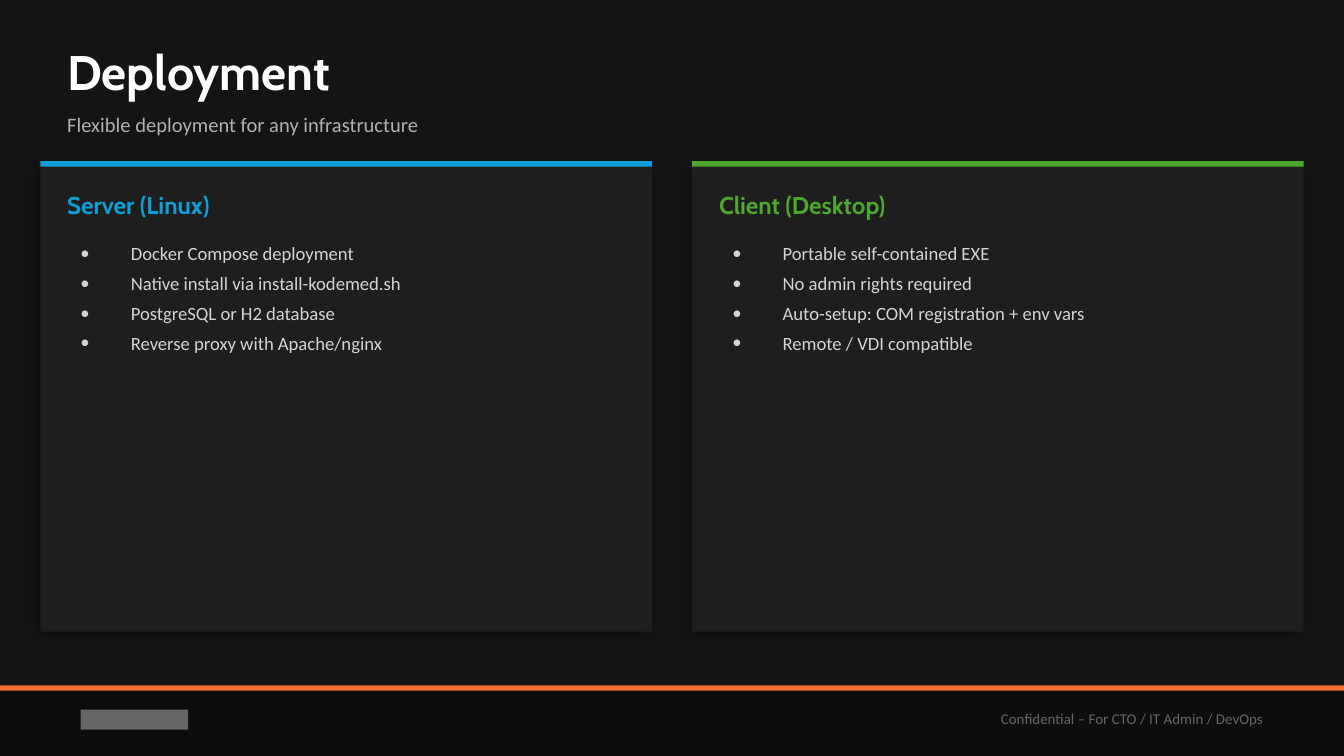
"""Build the deployment slide with a server card and a client card."""
from lxml.etree import SubElement as Sub
from pptx import Presentation
from pptx.dml.color import RGBColor as RGB
from pptx.enum.shapes import MSO_SHAPE as Shape
from pptx.enum.text import MSO_ANCHOR as Anchor, PP_ALIGN as Align
from pptx.oxml.ns import qn
from pptx.util import Emu, Pt

PX = 4572
HEX = {
    "back": "141414", "foot": "0D0D0D", "card": "1E1E1E", "white": "FFFFFF",
    "orange": "E97132", "blue": "0F9ED5", "green": "4EA72E",
    "sub": "B0B0B0", "body": "D4D4D4", "dim": "666666", "black": "000000",
}

deck = Presentation()
deck.slide_width, deck.slide_height = Emu(2000 * PX), Emu(1125 * PX)
slide = deck.slides.add_slide(deck.slide_layouts[6])
slide.background.fill.solid()
slide.background.fill.fore_color.rgb = RGB.from_string(HEX["back"])


def add_rect(x, y, w, h, color):
    rect = slide.shapes.add_shape(Shape.RECTANGLE, x * PX, y * PX, w * PX, h * PX)
    rect.shadow.inherit = False
    rect.fill.solid()
    rect.fill.fore_color.rgb = RGB.from_string(HEX[color])
    rect.line.fill.background()
    return rect


def add_text(x, y, w, h, lines, size, face, color, flush=True):
    frame = slide.shapes.add_textbox(x * PX, y * PX, w * PX, h * PX).text_frame
    frame.word_wrap = True
    frame.vertical_anchor = Anchor.MIDDLE
    if flush:
        frame.margin_left = frame.margin_top = 0
        frame.margin_right = frame.margin_bottom = 0
    frame.text = "\n".join(lines)
    for para in frame.paragraphs:
        if len(lines) > 1:
            props = para._p.get_or_add_pPr()
            props.set("marL", str(75 * PX))
            props.set("indent", str(-75 * PX))
            Sub(props, qn("a:buSzPct"), val="100000")
            Sub(props, qn("a:buFont"), typeface=face)
            Sub(props, qn("a:buChar"), char="•")
            para.space_after = Pt(4)
        font = para.font
        font.size, font.name, font.bold = Pt(size), face, face == "Cabin"
        font.color.rgb = RGB.from_string(HEX[color])
    return frame


add_rect(0, 1020, 2000, 105, "foot")
add_rect(0, 1020, 2000, 8, "orange")
add_rect(120, 1056, 160, 30, "dim")
note = add_text(1100, 1030, 800, 80, ["Confidential – For CTO / IT Admin / DevOps"],
                8, "Calibri", "dim", flush=False)
note.paragraphs[0].alignment = Align.RIGHT
add_text(100, 50, 1800, 110, ["Deployment"], 26, "Cabin", "white")
add_text(100, 150, 1800, 70, ["Flexible deployment for any infrastructure"],
         11, "Calibri", "sub")

cards = [
    ("Server (Linux)", "blue", [
        "Docker Compose deployment",
        "Native install via install-kodemed.sh",
        "PostgreSQL or H2 database",
        "Reverse proxy with Apache/nginx",
    ]),
    ("Client (Desktop)", "green", [
        "Portable self-contained EXE",
        "No admin rights required",
        "Auto-setup: COM registration + env vars",
        "Remote / VDI compatible",
    ]),
]

for col, (title, color, items) in enumerate(cards):
    left = 60 + col * 970
    card = add_rect(left, 240, 910, 700, "card")
    glow = Sub(card._element.spPr.find(qn("a:effectLst")), qn("a:outerShdw"),
               blurRad=str(Pt(8)), dist=str(Pt(3)), dir=str(135 * 60000),
               algn="bl", rotWithShape="0")
    tint = Sub(glow, qn("a:srgbClr"), val=HEX["black"])
    Sub(tint, qn("a:alpha"), val="35000")
    add_rect(left, 240, 910, 8, color)
    add_text(left + 40, 270, 830, 70, [title], 13, "Cabin", color)
    points = add_text(left + 40, 350, 830, 560, items, 10, "Calibri", "body",
                      flush=False)
    points.vertical_anchor = Anchor.TOP

deck.save("out.pptx")
